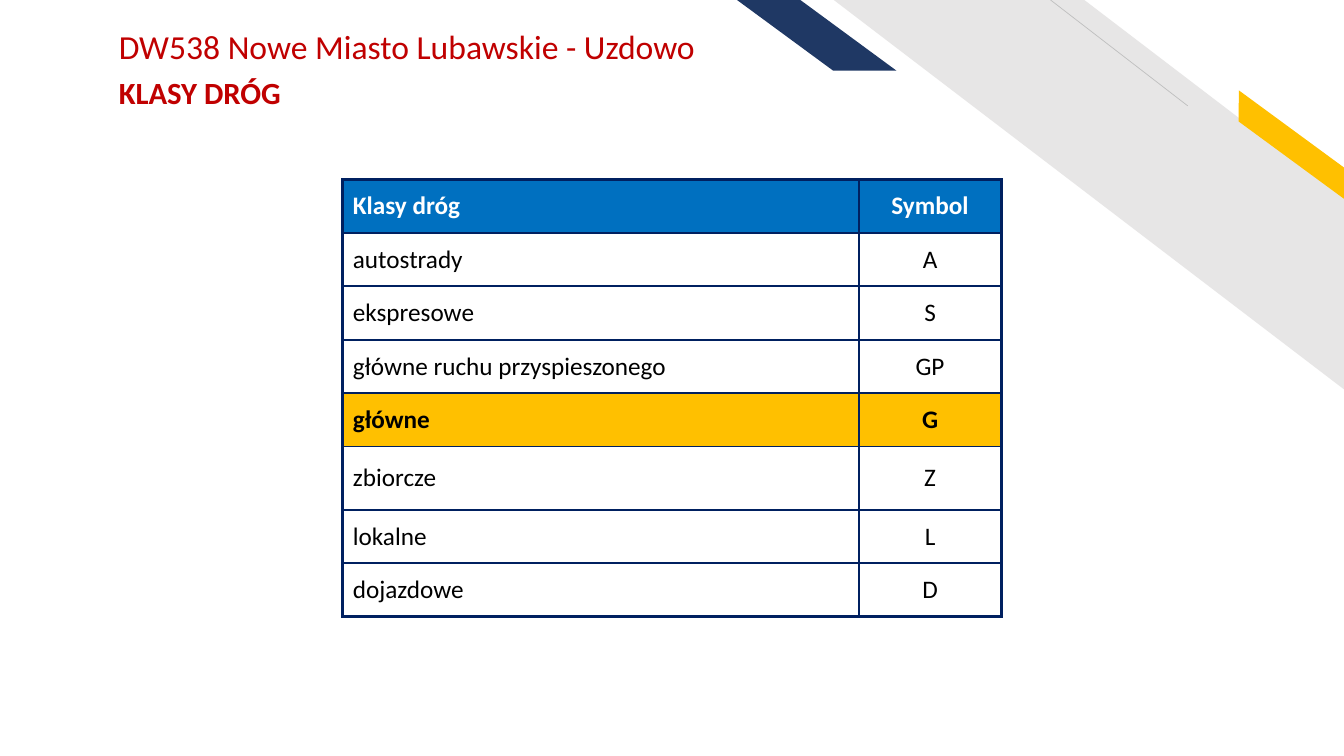
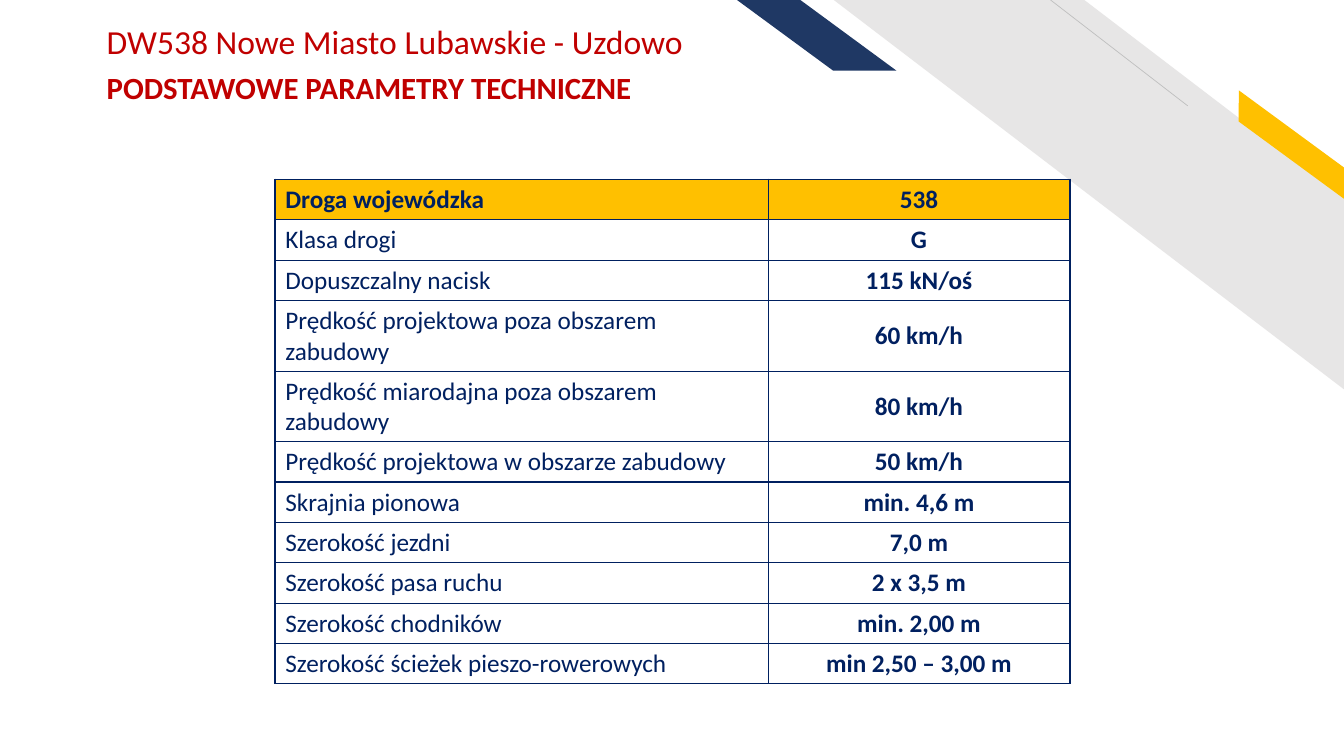
"""Build two slides on road 538: road classes and basic technical parameters."""
from dataclasses import dataclass
from typing import NamedTuple

from lxml import etree
from pptx import Presentation
from pptx.dml.color import RGBColor
from pptx.enum.shapes import MSO_CONNECTOR, MSO_SHAPE
from pptx.enum.text import MSO_ANCHOR, PP_ALIGN
from pptx.oxml.ns import qn
from pptx.slide import Slide
from pptx.table import _Cell
from pptx.util import Inches, Pt

PARALLELOGRAM = MSO_SHAPE.PARALLELOGRAM
DIAGONAL_STRIPE = MSO_SHAPE.DIAGONAL_STRIPE
STRAIGHT = MSO_CONNECTOR.STRAIGHT
MIDDLE = MSO_ANCHOR.MIDDLE
LEFT = PP_ALIGN.LEFT
CENTER = PP_ALIGN.CENTER

FONT = "Calibri"
ROAD_NAME = "DW538 Nowe Miasto Lubawskie - Uzdowo"

WHITE = RGBColor(0xFF, 0xFF, 0xFF)
BLACK = RGBColor(0x00, 0x00, 0x00)
RED = RGBColor(0xC0, 0x00, 0x00)
BLUE = RGBColor(0x00, 0x70, 0xC0)
NAVY = RGBColor(0x00, 0x20, 0x60)
DARK_BLUE = RGBColor(0x1F, 0x38, 0x64)
YELLOW = RGBColor(0xFF, 0xC0, 0x00)
PALE_GREY = RGBColor(0xE7, 0xE6, 0xE6)
GREY = RGBColor(0xBF, 0xBF, 0xBF)


class Band(NamedTuple):
    """A slanted band in the corner decoration."""

    preset: MSO_SHAPE
    left: float
    top: float
    width: float
    height: float
    slant: float
    color: RGBColor
    rotation: float = 0


class RowStyle(NamedTuple):
    """Fill, text colour and bold setting of the label and value cells."""

    fill: RGBColor
    color: RGBColor
    bold_label: bool
    bold_value: bool


class Row(NamedTuple):
    """A table row of a label and its value."""

    label: str
    value: str
    style: RowStyle
    height: float


@dataclass
class RoadSlide:
    """A slide with a two-line title and a two-column table."""

    subtitle: str
    title_box: tuple[float, float, float, float]
    table_left: float
    columns: tuple[float, float]
    outer_line: float
    inner_line: float
    bottom_line: float
    rows: list[Row]


BANDS = [
    Band(PARALLELOGRAM, 7.31, 0, 1.58, 0.7, 1.36, DARK_BLUE),
    Band(DIAGONAL_STRIPE, 8.27, 0, 5.07, 3.87, 0.51, PALE_GREY),
    Band(PARALLELOGRAM, 12.07, 1.31, 1.48, 0.25, 0.72, YELLOW, 36.3),
]

CLASS_HEADER = RowStyle(BLUE, WHITE, True, True)
CLASS_PLAIN = RowStyle(WHITE, BLACK, False, False)
CLASS_CHOSEN = RowStyle(YELLOW, BLACK, True, True)
PARAMETER_HEADER = RowStyle(YELLOW, NAVY, True, True)
PARAMETER_PLAIN = RowStyle(WHITE, NAVY, False, True)

TABLE_TOP = 1.78
CLASS_HEIGHT = 0.53
PARAMETER_HEIGHT = 0.38

ROAD_CLASSES = [
    Row("Klasy dróg", "Symbol", CLASS_HEADER, CLASS_HEIGHT),
    Row("autostrady", "A", CLASS_PLAIN, CLASS_HEIGHT),
    Row("ekspresowe", "S", CLASS_PLAIN, CLASS_HEIGHT),
    Row("główne ruchu przyspieszonego", "GP", CLASS_PLAIN, CLASS_HEIGHT),
    Row("główne", "G", CLASS_CHOSEN, CLASS_HEIGHT),
    Row("zbiorcze", "Z", CLASS_PLAIN, 0.63),
    Row("lokalne", "L", CLASS_PLAIN, CLASS_HEIGHT),
    Row("dojazdowe", "D", CLASS_PLAIN, CLASS_HEIGHT),
]

PARAMETERS = [
    ("Klasa drogi", "G"),
    ("Dopuszczalny nacisk", "115 kN/oś"),
    ("Prędkość projektowa poza obszarem zabudowy", "60 km/h"),
    ("Prędkość miarodajna poza obszarem zabudowy", "80 km/h"),
    ("Prędkość projektowa w obszarze zabudowy", "50 km/h"),
    ("Skrajnia pionowa", "min. 4,6 m"),
    ("Szerokość jezdni", "7,0 m"),
    ("Szerokość pasa ruchu", "2 x 3,5 m"),
    ("Szerokość chodników", "min. 2,00 m"),
    ("Szerokość ścieżek pieszo-rowerowych", "min 2,50 – 3,00 m"),
]

PARAMETER_ROWS = [Row("Droga wojewódzka", "538", PARAMETER_HEADER, PARAMETER_HEIGHT)] + [
    Row(label, value, PARAMETER_PLAIN, PARAMETER_HEIGHT) for label, value in PARAMETERS
]

ROAD_SLIDES = [
    RoadSlide("KLASY DRÓG", (1.08, 0.21, 5.98, 0.91), 3.4, (5.12, 1.41),
              2.25, 1.5, 2.25, ROAD_CLASSES),
    RoadSlide("PODSTAWOWE PARAMETRY TECHNICZNE", (0.96, 0.16, 7.09, 0.91), 2.73, (4.89, 2.99),
              1.5, 1, 1, PARAMETER_ROWS),
]


def add_band(slide: Slide, band: Band) -> None:
    """Draw one mirrored band."""
    shape = slide.shapes.add_shape(band.preset, Inches(band.left), Inches(band.top),
                                   Inches(band.width), Inches(band.height))
    shape.adjustments[0] = band.slant
    shape.rotation = band.rotation
    shape._element.spPr.find(qn("a:xfrm")).set("flipH", "1")
    shape.shadow.inherit = False
    shape.fill.solid()
    shape.fill.fore_color.rgb = band.color
    shape.line.fill.background()


def add_decoration(slide: Slide) -> None:
    """Draw the corner bands and the thin line over them."""
    for band in BANDS:
        add_band(slide, band)
    hairline = slide.shapes.add_connector(STRAIGHT, Inches(11.78), Inches(1.05),
                                          Inches(10.42), Inches(0))
    hairline.line.color.rgb = GREY
    hairline.line.width = Pt(0.5)
    etree.SubElement(hairline._element.spPr, qn("a:effectLst"))


def add_title(slide: Slide, road: RoadSlide) -> None:
    """Write the road name and the subtitle."""
    frame = slide.shapes.add_textbox(*map(Inches, road.title_box)).text_frame
    frame.word_wrap = True
    frame.text = f"{ROAD_NAME}\n{road.subtitle}"
    name, subtitle = frame.paragraphs
    subtitle.space_before = Pt(5)
    for paragraph, size, bold in ((name, 24, False), (subtitle, 22, True)):
        font = paragraph.runs[0].font
        font.name = FONT
        font.size = Pt(size)
        font.bold = bold
        font.color.rgb = RED


def set_borders(cell: _Cell, widths: dict[str, float]) -> None:
    """Give the cell navy borders of the given widths in points."""
    properties = cell._tc.get_or_add_tcPr()
    for position, (side, width) in enumerate(widths.items()):
        border = etree.Element(qn(f"a:ln{side}"), w=str(Pt(width)))
        fill = etree.SubElement(border, qn("a:solidFill"))
        etree.SubElement(fill, qn("a:srgbClr"), val=str(NAVY))
        properties.insert(position, border)


def fill_cell(cell: _Cell, text: str, style: RowStyle, bold: bool, alignment: PP_ALIGN) -> None:
    """Write and colour one cell."""
    cell.fill.solid()
    cell.fill.fore_color.rgb = style.fill
    cell.vertical_anchor = MIDDLE
    cell.text_frame.text = text
    paragraph = cell.text_frame.paragraphs[0]
    paragraph.alignment = alignment
    font = paragraph.runs[0].font
    font.name = FONT
    font.size = Pt(18)
    font.bold = bold
    font.color.rgb = style.color


def add_road_table(slide: Slide, road: RoadSlide) -> None:
    """Draw the table with a heavier outer frame."""
    height = sum(row.height for row in road.rows)
    table = slide.shapes.add_table(len(road.rows), len(road.columns), Inches(road.table_left),
                                   Inches(TABLE_TOP), Inches(sum(road.columns)),
                                   Inches(height)).table
    table.first_row = False
    table.horz_banding = False
    for column, width in zip(table.columns, road.columns):
        column.width = Inches(width)
    outer, inner = road.outer_line, road.inner_line
    last = len(road.rows) - 1
    for index, row in enumerate(road.rows):
        table.rows[index].height = Inches(row.height)
        label, value = table.rows[index].cells
        fill_cell(label, row.label, row.style, row.style.bold_label, LEFT)
        fill_cell(value, row.value, row.style, row.style.bold_value, CENTER)
        top = outer if index == 0 else inner
        bottom = road.bottom_line if index == last else inner
        set_borders(label, {"L": outer, "R": inner, "T": top, "B": bottom})
        set_borders(value, {"L": inner, "R": outer, "T": top, "B": bottom})


def main() -> None:
    """Build and save the presentation."""
    presentation = Presentation()
    presentation.slide_width = Inches(13.33)
    presentation.slide_height = Inches(7.5)
    blank = presentation.slide_layouts[6]
    for road in ROAD_SLIDES:
        slide = presentation.slides.add_slide(blank)
        add_decoration(slide)
        add_title(slide, road)
        add_road_table(slide, road)
    presentation.save("out.pptx")


if __name__ == "__main__":
    main()
